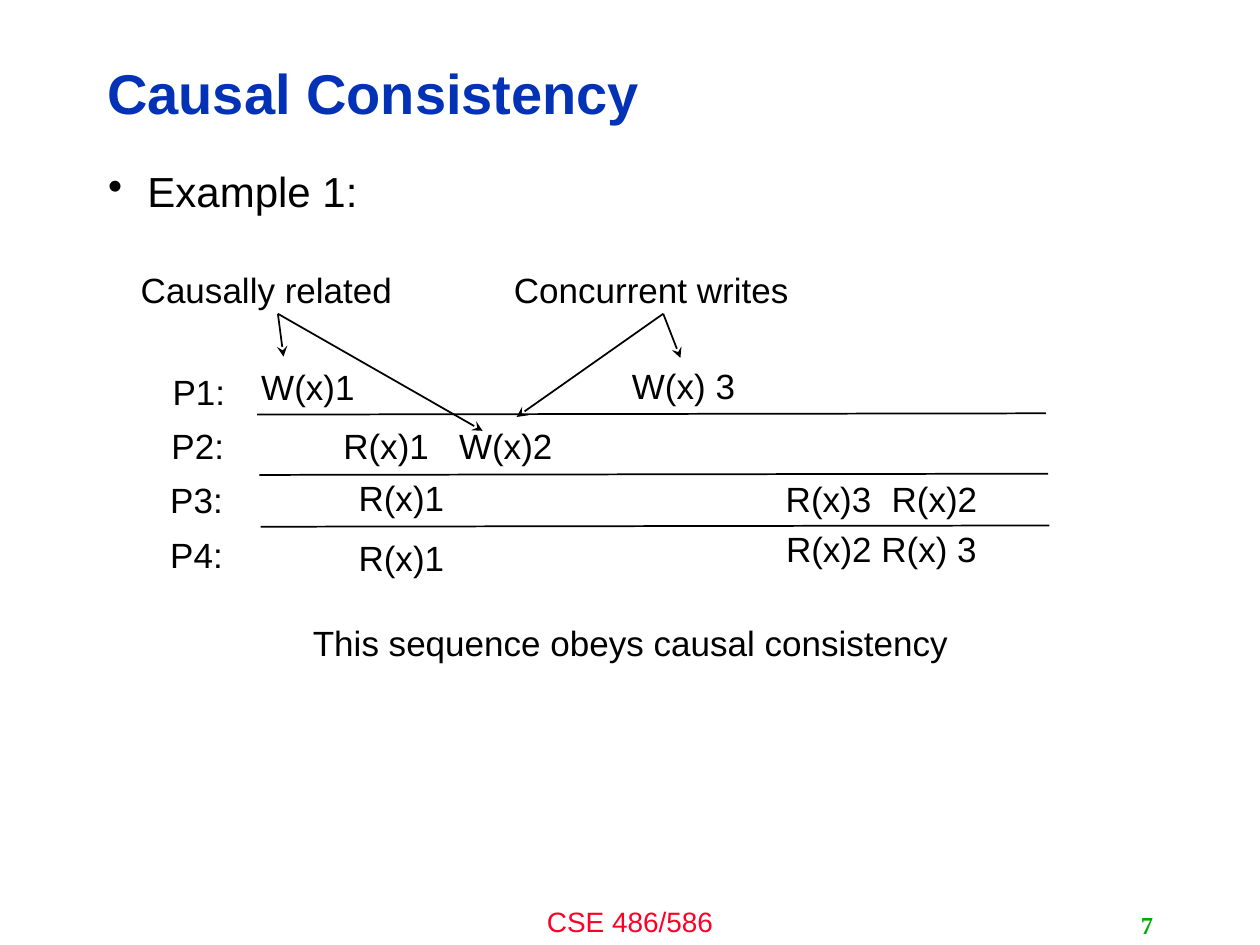
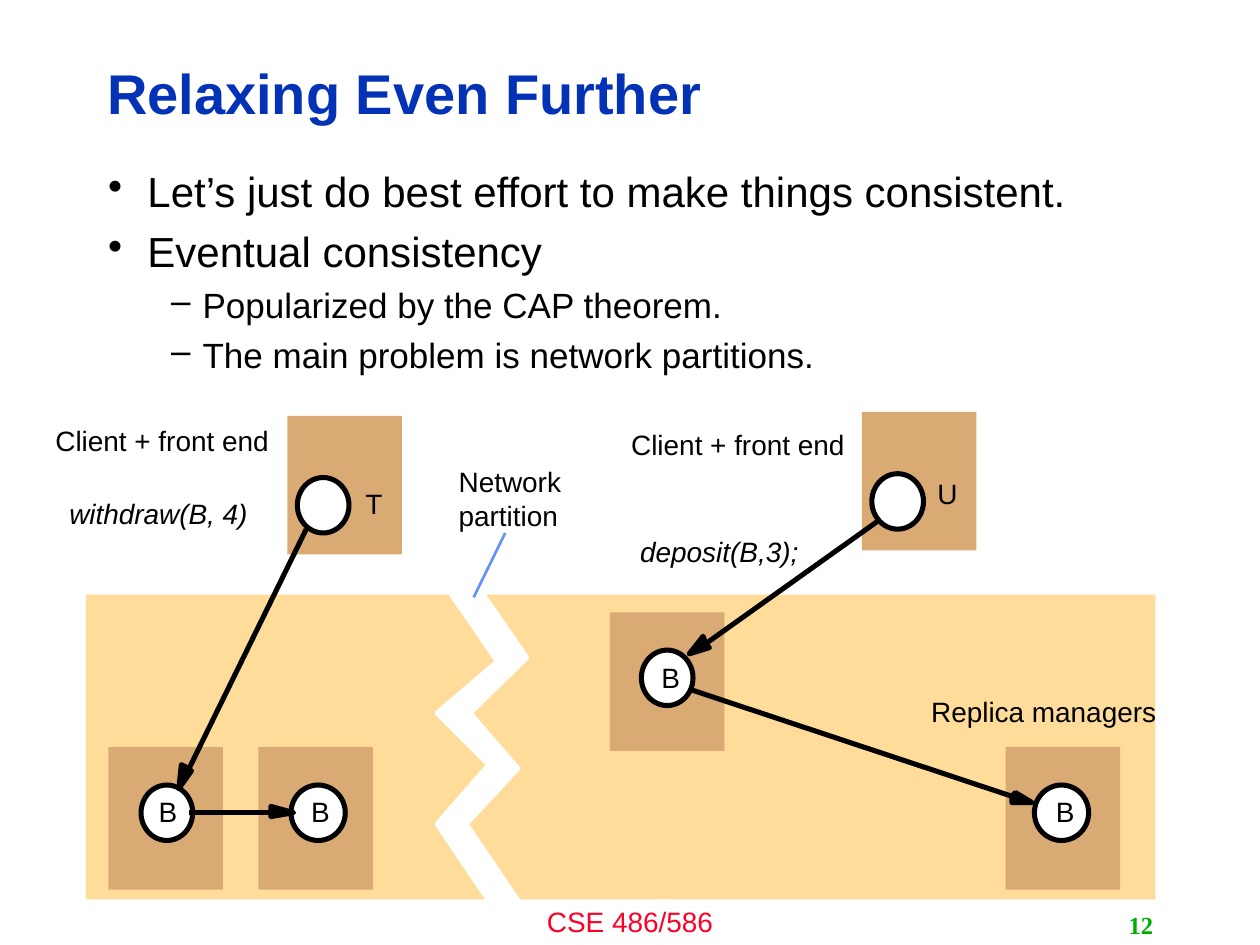
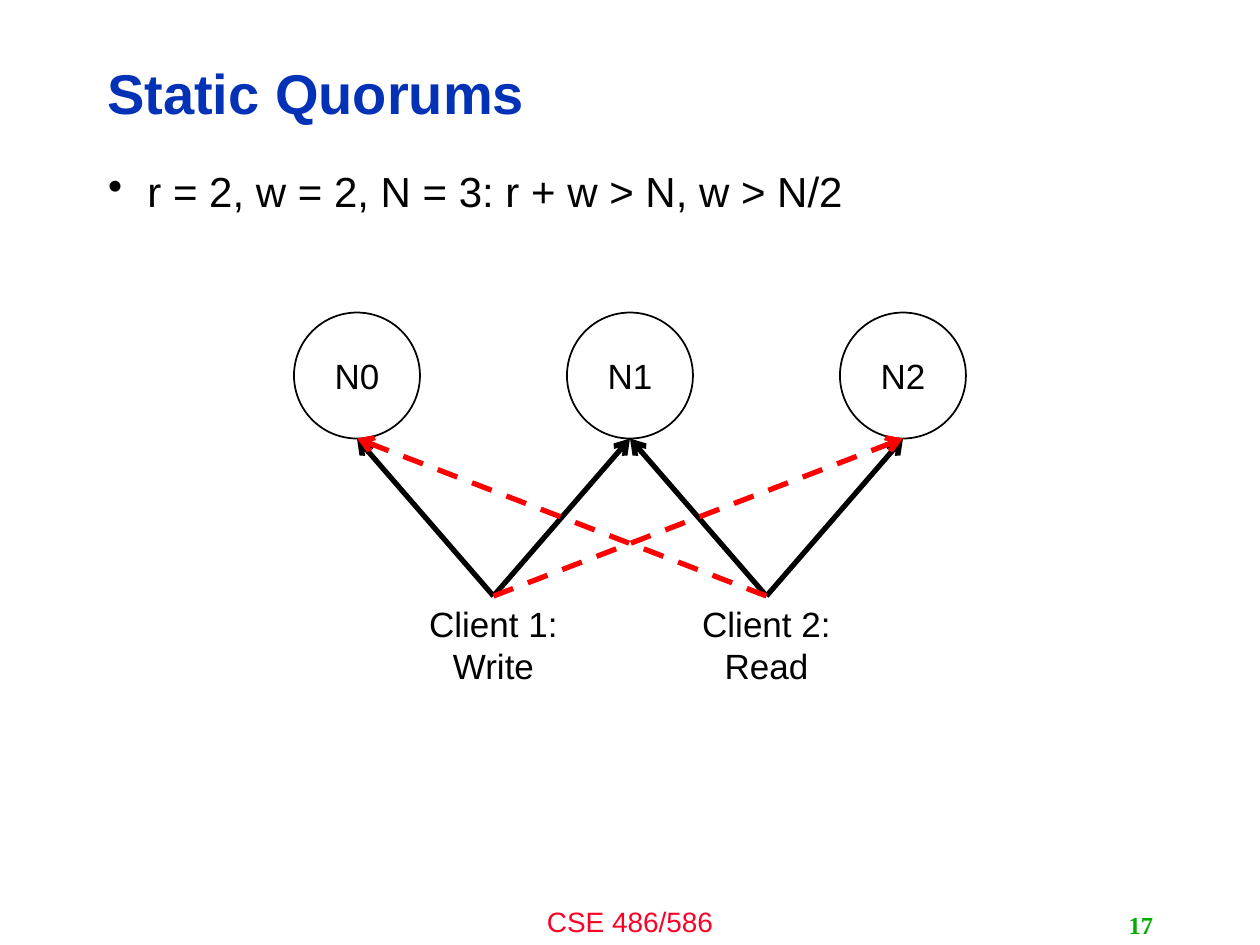
from dataclasses import dataclass

from lxml import etree
from pptx import Presentation
from pptx.dml.color import RGBColor
from pptx.enum.dml import MSO_LINE
from pptx.enum.shapes import MSO_CONNECTOR, MSO_SHAPE
from pptx.enum.text import MSO_ANCHOR, MSO_AUTO_SIZE, PP_ALIGN
from pptx.oxml.ns import qn
from pptx.util import Pt

LEFT, CENTER, RIGHT = PP_ALIGN.LEFT, PP_ALIGN.CENTER, PP_ALIGN.RIGHT
TOP, MIDDLE = MSO_ANCHOR.TOP, MSO_ANCHOR.MIDDLE
NO_AUTOSIZE = MSO_AUTO_SIZE.NONE
STRAIGHT = MSO_CONNECTOR.STRAIGHT
RECTANGLE, ELLIPSE = MSO_SHAPE.RECTANGLE, MSO_SHAPE.OVAL
DASH = MSO_LINE.DASH

BLACK = RGBColor(0x00, 0x00, 0x00)
WHITE = RGBColor(0xFF, 0xFF, 0xFF)
TITLE_BLUE = RGBColor(0x03, 0x32, 0xB7)
FOOTER_RED = RGBColor(0xFC, 0x01, 0x28)
NUMBER_GREEN = RGBColor(0x00, 0xAE, 0x00)
SAND = RGBColor(0xFF, 0xDC, 0x99)
TAN = RGBColor(0xD9, 0xAA, 0x73)
POINTER_BLUE = RGBColor(0x61, 0x8F, 0xFD)
RED = RGBColor(0xFF, 0x00, 0x00)

Point = tuple[float, float]
Frame = tuple[float, float, float, float]

TITLE_FRAME = (54, 25.9, 574.6, 58.3)
BODY_FRAME = (54.7, 94.3, 604.8, 388.1)
FOOTER_FRAME = (240, 513.4, 240, 26.6)
NUMBER_FRAME = (516.2, 517, 149.8, 23)
HEAVY = 2.88


@dataclass(frozen=True)
class TextStyle:
    size: float
    color: RGBColor = BLACK
    name: str = "Arial"
    bold: bool = False
    italic: bool = False
    align: PP_ALIGN = CENTER
    anchor: MSO_ANCHOR = TOP
    wrap: bool = True
    insets: Point = (7.2, 3.6)


TITLE_STYLE = TextStyle(32, TITLE_BLUE, bold=True, align=LEFT, anchor=MIDDLE)
FOOTER_STYLE = TextStyle(16, FOOTER_RED)
NUMBER_STYLE = TextStyle(14, NUMBER_GREEN, "Times New Roman", bold=True,
                         align=RIGHT, anchor=MIDDLE)
EVENT_STYLE = TextStyle(20, wrap=False)
CLIENT_STYLE = TextStyle(20)
NODE_STYLE = TextStyle(20, anchor=MIDDLE)
CAPTION_STYLE = TextStyle(16, align=LEFT, wrap=False, insets=(0, 0))
CALL_STYLE = TextStyle(16, italic=True, align=LEFT, wrap=False, insets=(0, 0))


@dataclass(frozen=True)
class BulletLevel:
    mark: str
    size: float
    left: float
    hanging: float
    space_before: float


LEVELS = (BulletLevel("•", 24, 22.5, 22.5, 8.3), BulletLevel("–", 20, 54, 18, 6.9))


@dataclass(frozen=True)
class Label:
    text: str
    left: float
    top: float
    width: float
    style: TextStyle = EVENT_STYLE


@dataclass(frozen=True)
class Host:
    left: float
    top: float
    height: float
    process: Point
    process_width: float
    letter: str
    letter_at: Point


@dataclass(frozen=True)
class Message:
    """A shaft and the two wings and tip of its head."""
    start: Point
    end: Point
    head: tuple[Point, Point, Point]


def points(*lengths: float) -> list[Pt]:
    return [Pt(length) for length in lengths]


def set_all(target, formats: dict) -> None:
    for attribute, value in formats.items():
        setattr(target, attribute, value)


def format_span(span, style: TextStyle) -> None:
    set_all(span.font, {"name": style.name, "size": Pt(style.size),
                        "bold": style.bold, "italic": style.italic})
    span.font.color.rgb = style.color


def format_frame(frame, style: TextStyle) -> None:
    across, down = points(*style.insets)
    set_all(frame, {"auto_size": NO_AUTOSIZE, "word_wrap": style.wrap,
                    "vertical_anchor": style.anchor,
                    "margin_left": across, "margin_right": across,
                    "margin_top": down, "margin_bottom": down})


def write(shape, text: str, style: TextStyle) -> None:
    format_frame(shape.text_frame, style)
    para = shape.text_frame.paragraphs[0]
    para.alignment = style.align
    span = para.add_run()
    span.text = text
    format_span(span, style)


def add_text(page, text: str, frame: Frame, style: TextStyle) -> None:
    write(page.shapes.add_textbox(*points(*frame)), text, style)


def add_labels(page, labels: list[Label], height: float) -> None:
    for label in labels:
        add_text(page, label.text, (label.left, label.top, label.width, height), label.style)


def paint(shape, fill: RGBColor, line: RGBColor | None = None, width: float = HEAVY) -> None:
    shape.shadow.inherit = False
    shape.fill.solid()
    shape.fill.fore_color.rgb = fill
    if line is None:
        shape.line.fill.background()
    else:
        shape.line.color.rgb = line
        shape.line.width = Pt(width)


def add_block(page, kind: MSO_SHAPE, frame: Frame, fill: RGBColor,
              line: RGBColor | None = None, width: float = HEAVY):
    block = page.shapes.add_shape(kind, *points(*frame))
    paint(block, fill, line, width)
    return block


def add_outline(page, corners: list[Point], color: RGBColor) -> None:
    start, *rest = [points(*corner) for corner in corners]
    builder = page.shapes.build_freeform(*start, scale=1.0)
    builder.add_line_segments(rest, close=True)
    paint(builder.convert_to_shape(), color, color)


def add_line(page, start: Point, end: Point, width: float = 1, color: RGBColor = BLACK,
             arrow: str | None = None, dash: MSO_LINE | None = None) -> None:
    connector = page.shapes.add_connector(STRAIGHT, *points(*start, *end))
    connector.line.color.rgb = color
    connector.line.width = Pt(width)
    if dash is not None:
        connector.line.dash_style = dash
    if arrow:
        etree.SubElement(connector.line._get_or_add_ln(), qn("a:tailEnd"), type=arrow)
    etree.SubElement(connector._element.spPr, qn("a:effectLst"))


def add_body(page, items: list[tuple[int, str]]) -> None:
    frame = page.shapes.add_textbox(*points(*BODY_FRAME)).text_frame
    format_frame(frame, TextStyle(24))
    for index, (depth, text) in enumerate(items):
        level = LEVELS[depth]
        para = frame.add_paragraph() if index else frame.paragraphs[0]
        para.level = depth
        para.line_spacing = 0.9
        para.space_before = Pt(level.space_before if index else 0)
        span = para.add_run()
        span.text = text
        format_span(span, TextStyle(level.size))
        properties = para._p.get_or_add_pPr()
        properties.set("marL", str(Pt(level.left)))
        properties.set("indent", str(-Pt(level.hanging)))
        etree.SubElement(properties, qn("a:buChar"), char=level.mark)


def add_page(deck, title: str, number: int, items: list[tuple[int, str]]):
    """Add a slide with its title, bullets, footer and number."""
    page = deck.slides.add_slide(deck.slide_layouts[5])
    heading = page.shapes.title
    set_all(heading, dict(zip(("left", "top", "width", "height"), points(*TITLE_FRAME))))
    write(heading, title, TITLE_STYLE)
    heading.text_frame.paragraphs[0].line_spacing = 0.9
    add_text(page, "CSE 486/586", FOOTER_FRAME, FOOTER_STYLE)
    add_text(page, str(number), NUMBER_FRAME, NUMBER_STYLE)
    add_body(page, items)
    return page


def build_causal_consistency(deck) -> None:
    page = add_page(deck, "Causal Consistency", 7, [(0, "Example 1:")])
    for left, top in ((146.9, 236.9), (148.3, 271.4), (149, 301)):
        add_line(page, (left, top), (left + 450.7, top - 0.7))
    processes = [Label(f"P{row + 1}:", left, 208.1 + 31 * row, 44.6)
                 for row, left in enumerate((91.4, 90.7, 90, 90))]
    events = [
        Label("W(x)1", 141.8, 205.2, 68.4),
        Label("W(x) 3", 353.5, 204.5, 74.2),
        Label("R(x)1", 188.6, 239, 64.1),
        Label("W(x)2", 254.8, 239, 68.4),
        Label("R(x)1", 197.3, 268.6, 64.1),
        Label("R(x)1", 197.3, 303.1, 64.1),
        Label("R(x)3", 441.4, 269.3, 64.1),
        Label("R(x)2", 501.9, 269.3, 64.1),
        Label("R(x)2 R(x) 3", 441.4, 298.1, 124.6),
    ]
    remarks = [
        Label("This sequence obeys causal consistency", 169.9, 351.4, 380.9),
        Label("Concurrent writes", 285.8, 149.8, 172.8),
        Label("Causally related", 72.7, 149.8, 159.1),
    ]
    add_labels(page, processes + events + remarks, 31.7)
    relations = {
        (379, 179.3): ((295.2, 238.3), (388.8, 204.5)),
        (158.8, 179.3): ((162, 203.8), (275.8, 246.2)),
    }
    for remark, writes in relations.items():
        for target in writes:
            add_line(page, remark, target, arrow="stealth")


def build_eventual_consistency(deck) -> None:
    page = add_page(deck, "Relaxing Even Further", 12, [
        (0, "Let’s just do best effort to make things consistent."),
        (0, "Eventual consistency"),
        (1, "Popularized by the CAP theorem."),
        (1, "The main problem is network partitions."),
    ])
    add_block(page, RECTANGLE, (49, 339.8, 611.3, 174.2), SAND)
    hosts = [
        Host(164.2, 237.6, 79.2, (169.9, 272.9), 29.5, "T", (208.8, 277.9)),
        Host(492.5, 235.4, 79.2, (498.2, 270.7), 29.5, "U", (535.7, 272.2)),
        Host(348.5, 349.9, 79.2, (366.5, 371.5), 29.5, "B", (378, 377.3)),
        Host(574.6, 427, 81.4, (591.1, 448.6), 31, "B", (603.4, 454.3)),
        Host(61.9, 427, 81.4, (80.6, 448.6), 29.5, "B", (90.7, 454.3)),
        Host(147.6, 427, 81.4, (166.3, 448.6), 31, "B", (177.8, 454.3)),
    ]
    for host in hosts:
        add_block(page, RECTANGLE, (host.left, host.top, 65.5, host.height), TAN)
        add_block(page, ELLIPSE, (*host.process, host.process_width, 31.7), WHITE, BLACK)
    letters = [Label(host.letter, *host.letter_at, 11, CAPTION_STYLE) for host in hosts]
    captions = [
        Label("Client + front end", 31.7, 241.9, 122.4, CAPTION_STYLE),
        Label("Client + front end", 360.7, 244.1, 122.4, CAPTION_STYLE),
        Label("withdraw(B, 4)", 39.6, 283.7, 102.2, CALL_STYLE),
        Label("deposit(B,3);", 365.8, 305.3, 90.7, CALL_STYLE),
        Label("Replica managers", 532.1, 396.7, 128.9, CAPTION_STYLE),
        Label("Network", 262.1, 265.7, 58.3, CAPTION_STYLE),
        Label("partition", 262.1, 285.1, 56.9, CAPTION_STYLE),
    ]
    add_labels(page, letters + captions, 19.4)
    messages = [
        Message((175, 302.4), (108, 439.2), ((109.4, 440.6), (102.2, 450.7), (103.7, 437))),
        Message((108, 464.4), (154.8, 464.4), ((154.8, 460.8), (167.8, 464.4), (154.8, 466.6))),
        Message((503.3, 296.6), (403.2, 367.9), ((405.4, 370.1), (393.8, 373.7), (401.8, 363.6))),
        Message((393.8, 393.8), (578.2, 455), ((580.3, 452.9), (589.7, 458.6), (578.2, 458.6))),
    ]
    for message in messages:
        add_outline(page, [message.end, *message.head], BLACK)
        add_line(page, message.start, message.end, HEAVY)
    partition = [
        (255.6, 336.2), (284.4, 378), (249.8, 407.5), (279.4, 437), (249.8, 470.9),
        (284.4, 522), (299.5, 519.8), (266.4, 470.9), (295.9, 439.2), (268.6, 407.5),
        (301, 375.8), (272.2, 334.1),
    ]
    add_outline(page, partition, WHITE)
    add_line(page, (288.7, 304.6), (270.7, 341.3), 1.5, POINTER_BLUE)


def build_static_quorums(deck) -> None:
    page = add_page(deck, "Static Quorums", 17,
                    [(0, "r = 2, w = 2, N = 3: r + w > N, w > N/2")])
    diameter, node_top, client_top, step = 72, 178.6, 340.6, 156
    node_feet = [(204 + step * index, node_top + diameter) for index in range(3)]
    for index, (middle, _) in enumerate(node_feet):
        node = add_block(page, ELLIPSE, (middle - diameter / 2, node_top, diameter, diameter),
                         WHITE, BLACK, 1)
        write(node, f"N{index}", NODE_STYLE)
    clients = [(282 + step * index, client_top) for index in range(2)]
    for (middle, top), text in zip(clients, ("Client 1: Write", "Client 2: Read")):
        add_text(page, text, (middle - 54, top, 108, 55.4), CLIENT_STYLE)
    for index, client in enumerate(clients):
        for foot in node_feet[index:index + 2]:
            add_line(page, client, foot, 3, arrow="arrow")
    for client, foot in zip(clients, (node_feet[2], node_feet[0])):
        add_line(page, client, foot, 3, RED, "arrow", DASH)


def main() -> None:
    deck = Presentation()
    deck.slide_width, deck.slide_height = points(720, 540)
    build_causal_consistency(deck)
    build_eventual_consistency(deck)
    build_static_quorums(deck)
    deck.save("out.pptx")


if __name__ == "__main__":
    main()
